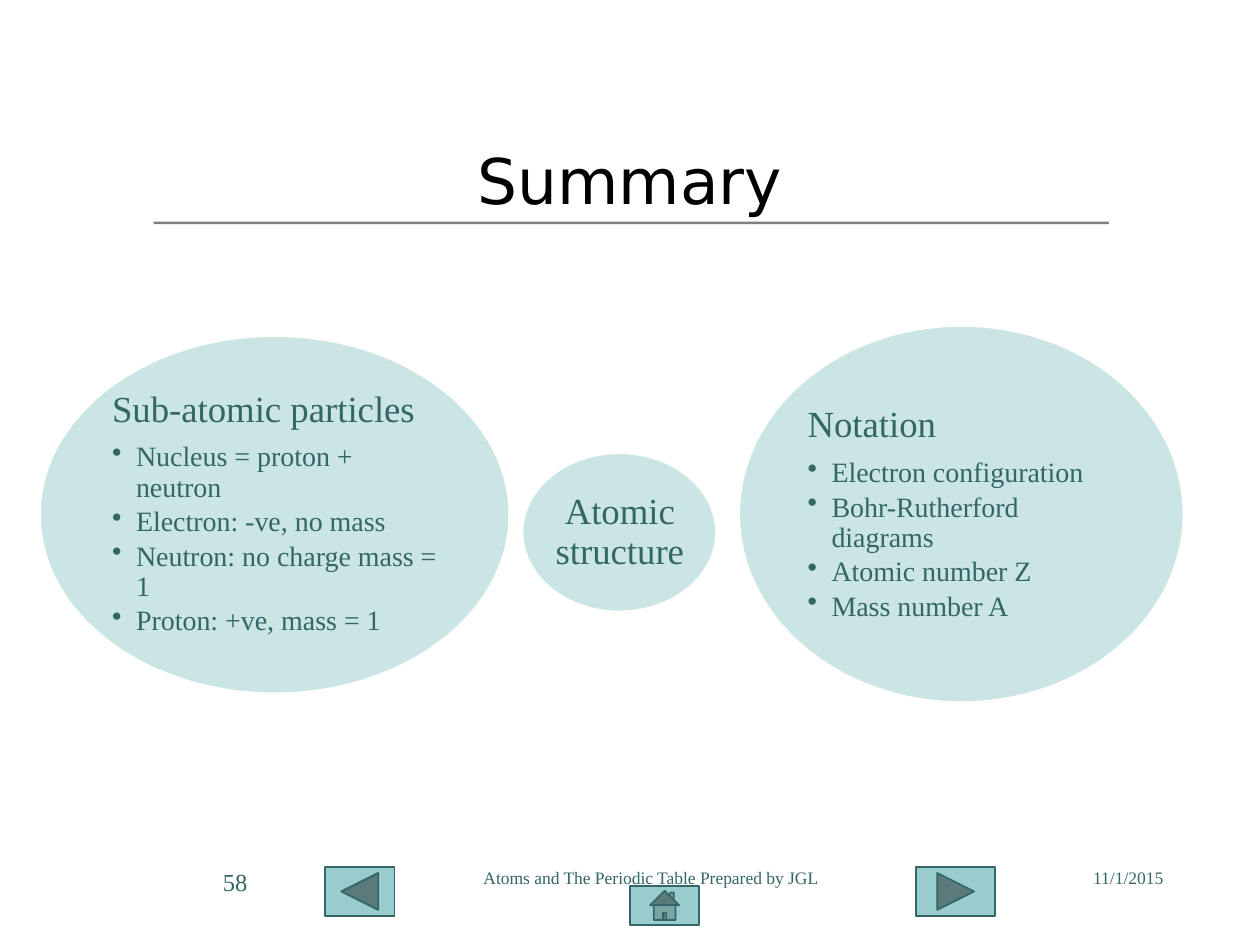
from lxml.etree import SubElement
from pptx import Presentation
from pptx.dml.color import RGBColor
from pptx.enum.shapes import MSO_SHAPE
from pptx.enum.text import MSO_ANCHOR, PP_ALIGN
from pptx.oxml.ns import qn
from pptx.util import Inches, Pt

BLACK = RGBColor(0x00, 0x00, 0x00)
WHITE = RGBColor(0xFF, 0xFF, 0xFF)
GRAY = RGBColor(0x80, 0x80, 0x80)
AQUA = RGBColor(0x99, 0xCC, 0xCC)
TEAL = RGBColor(0x33, 0x66, 0x66)
TITLE_FONT = "DejaVu Sans"
BODY_FONT = "Times New Roman"


def add_bullet(p):
    pPr = p._p.get_or_add_pPr()
    pPr.set("marL", str(Inches(0.19)))
    pPr.set("indent", str(-Inches(0.19)))
    SubElement(pPr, qn("a:buChar"), char="•")


def write(p, text, size=10, font=BODY_FONT, color=TEAL, align=PP_ALIGN.LEFT,
          spacing=None, after=0, bullet=False):
    """Fill one paragraph with formatted text."""
    p.alignment = align
    p.line_spacing = spacing
    p.space_after = Pt(after)
    if bullet:
        p.level = 1
        add_bullet(p)
    r = p.add_run()
    r.text = text
    r.font.size = Pt(size)
    r.font.name = font
    r.font.color.rgb = color


def add_text_box(slide, box, anchor=MSO_ANCHOR.TOP, inset=None):
    tf = slide.shapes.add_textbox(*map(Inches, box)).text_frame
    tf.word_wrap = True
    tf.vertical_anchor = anchor
    if inset is not None:
        tf.margin_left = tf.margin_right = Inches(inset)
        tf.margin_top = tf.margin_bottom = Inches(inset)
    return tf


def add_filled_shape(slide, kind, box, fill, line=None, width=1, alpha=None):
    sp = slide.shapes.add_shape(kind, *map(Inches, box))
    sp.shadow.inherit = False
    sp.fill.solid()
    sp.fill.fore_color.rgb = fill
    if alpha is not None:
        color = sp._element.spPr.find(qn("a:solidFill"))[0]
        SubElement(color, qn("a:alpha"), val=str(alpha * 1000))
    if line is None:
        sp.line.fill.background()
    else:
        sp.line.color.rgb = line
        sp.line.width = Pt(width)


def add_bubble(slide, oval, box, heading, bullets=()):
    """Translucent ellipse with a heading and optional bullets."""
    add_filled_shape(slide, MSO_SHAPE.OVAL, oval, AQUA, WHITE, 2, alpha=50)
    tf = add_text_box(slide, box, MSO_ANCHOR.MIDDLE, 0.03)
    align = PP_ALIGN.LEFT if bullets else PP_ALIGN.CENTER
    write(tf.paragraphs[0], heading, size=21, align=align, spacing=0.9, after=7.35)
    for text in bullets:
        write(tf.add_paragraph(), text, size=16, spacing=0.9, after=2.4, bullet=True)


def add_title(slide, text):
    title = slide.shapes.title
    title.left, title.top, title.width, title.height = map(Inches, (0, 0.92, 10, 1))
    tf = title.text_frame
    tf.vertical_anchor = MSO_ANCHOR.MIDDLE
    write(tf.paragraphs[0], text, size=36, font=TITLE_FONT, color=BLACK,
          align=PP_ALIGN.CENTER)


def main():
    prs = Presentation()
    prs.slide_width, prs.slide_height = Inches(10), Inches(7.5)
    slide = prs.slides.add_slide(prs.slide_layouts[5])

    # Title and rule
    add_title(slide, "Summary")
    add_filled_shape(slide, MSO_SHAPE.RECTANGLE, (1.22, 1.76, 7.58, 0.02), GRAY)

    # Navigation buttons
    for kind, box in (
        (MSO_SHAPE.ACTION_BUTTON_BACK_OR_PREVIOUS, (2.58, 6.88, 0.55, 0.39)),
        (MSO_SHAPE.ACTION_BUTTON_FORWARD_OR_NEXT, (7.27, 6.88, 0.63, 0.39)),
        (MSO_SHAPE.ACTION_BUTTON_HOME, (5, 7.03, 0.55, 0.31)),
    ):
        add_filled_shape(slide, kind, box, AQUA, TEAL)

    # Concept bubbles
    add_bubble(slide, (4.14, 3.59, 1.55, 1.27), (4.37, 3.78, 1.1, 0.9),
               "Atomic structure")
    add_bubble(slide, (0.31, 2.66, 3.74, 2.85), (0.86, 3.07, 2.64, 2.01),
               "Sub-atomic particles",
               ("Nucleus = proton + neutron", "Electron: -ve, no mass",
                "Neutron: no charge mass = 1", "Proton: +ve, mass = 1"))
    add_bubble(slide, (5.86, 2.58, 3.54, 3), (6.38, 3.02, 2.5, 2.12),
               "Notation",
               ("Electron configuration", "Bohr-Rutherford diagrams",
                "Atomic number Z", "Mass number A"))

    # Footer: date, slide number, credit
    for text, left, width, size, align in (
        ("11/1/2015", 7.25, 2.08, 10, PP_ALIGN.RIGHT),
        ("58", 1.67, 1.42, 14, PP_ALIGN.LEFT),
        ("Atoms and The Periodic Table Prepared by JGL", 3.58, 3.17, 10,
         PP_ALIGN.CENTER),
    ):
        tf = add_text_box(slide, (left, 6.83, width, 0.5))
        write(tf.paragraphs[0], text, size=size, align=align)

    prs.save("out.pptx")


if __name__ == "__main__":
    main()
